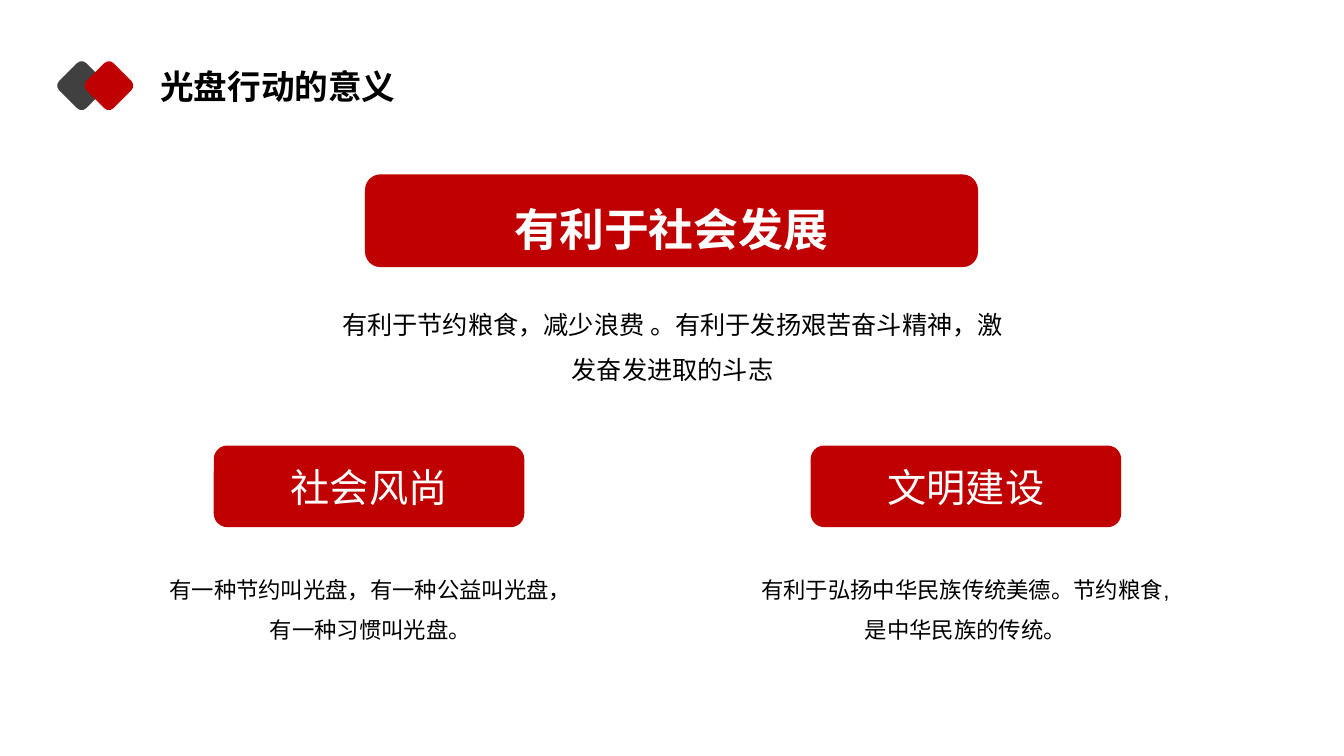
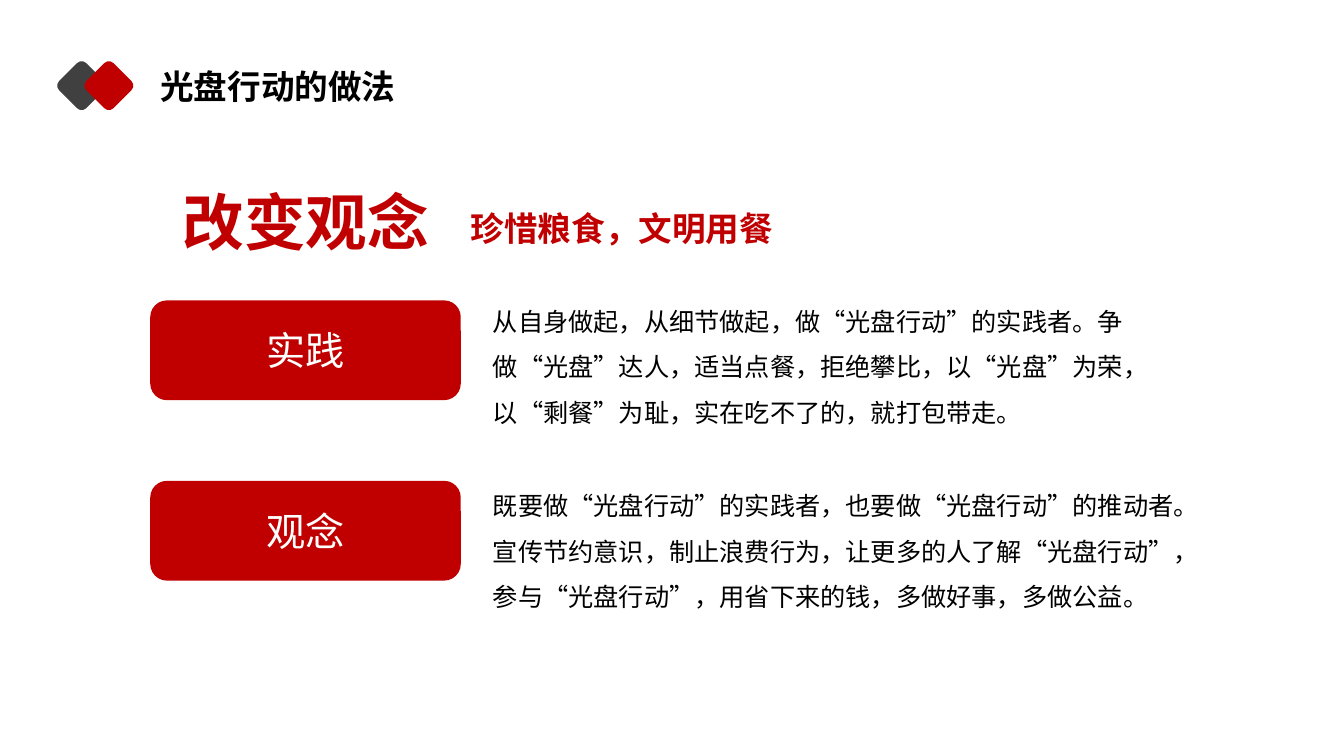
from dataclasses import dataclass

from pptx import Presentation
from pptx.dml.color import RGBColor as RGB
from pptx.enum.lang import MSO_LANGUAGE_ID as Lang
from pptx.enum.shapes import MSO_SHAPE as Shape
from pptx.enum.text import MSO_ANCHOR as Anchor
from pptx.enum.text import MSO_AUTO_SIZE as Fit
from pptx.enum.text import PP_ALIGN as Align
from pptx.util import Inches, Pt


@dataclass(frozen=True)
class Theme:
    font: str = "Arial"
    red: RGB = RGB(0xC0, 0x00, 0x00)
    gray: RGB = RGB(0x40, 0x40, 0x40)
    black: RGB = RGB(0x00, 0x00, 0x00)
    white: RGB = RGB(0xFF, 0xFF, 0xFF)
    small: int = 16
    body: int = 18
    title: int = 24
    label: int = 28
    banner: int = 32
    hero: int = 44


THEME = Theme()


def write(frame, text, size, color, bold=False, align=Align.LEFT, lead=1.0):
    """Put one styled run into the first paragraph of a frame."""
    para = frame.paragraphs[0]
    para.alignment = align
    para.line_spacing = lead
    run = para.add_run()
    run.text = text
    font = run.font
    font.name = THEME.font
    font.size = Pt(size)
    font.bold = bold
    font.color.rgb = color
    font.language_id = Lang.SIMPLIFIED_CHINESE


def add_block(shapes, box, color):
    block = shapes.add_shape(Shape.ROUNDED_RECTANGLE, *map(Inches, box))
    block.shadow.inherit = False
    block.fill.solid()
    block.fill.fore_color.rgb = color
    block.line.fill.background()
    return block


def add_label(slide, box, text, size=THEME.label, bold=False, lead=1.0):
    """Add a red block with centred white text."""
    frame = add_block(slide.shapes, box, THEME.red).text_frame
    frame.word_wrap = True
    frame.vertical_anchor = Anchor.MIDDLE
    write(frame, text, size, THEME.white, bold, Align.CENTER, lead)


def add_text(slide, box, text, size=THEME.body, color=THEME.black,
             bold=False, align=Align.LEFT, lead=1.5, wrap=True):
    frame = slide.shapes.add_textbox(*map(Inches, box)).text_frame
    frame.word_wrap = wrap
    frame.auto_size = Fit.SHAPE_TO_FIT_TEXT
    write(frame, text, size, color, bold, align, lead)


def add_mark(slide):
    """Add the pair of overlapping diamonds beside the title."""
    group = slide.shapes.add_group_shape()
    for left, color in ((0.62, THEME.gray), (0.89, THEME.red)):
        add_block(group.shapes, (left, 0.66, 0.38, 0.38), color).rotation = 45


def add_slide(deck, text):
    """Start a slide with the shared mark and title."""
    slide = deck.slides.add_slide(deck.slide_layouts[5])
    add_mark(slide)
    title = slide.shapes.title
    title.left, title.top = Inches(1.49), Inches(0.6)
    title.width, title.height = Inches(2.56), Inches(0.5)
    frame = title.text_frame
    frame.word_wrap = False
    frame.auto_size = Fit.SHAPE_TO_FIT_TEXT
    frame.vertical_anchor = Anchor.TOP
    write(frame, text, THEME.title, THEME.black, bold=True)
    return slide


def add_value(deck):
    slide = add_slide(deck, "光盘行动的意义")
    add_label(slide, (3.62, 1.73, 6.08, 0.92), "有利于社会发展",
              THEME.banner, bold=True, lead=1.3)
    add_text(slide, (3.28, 2.87, 6.78, 1.01),
             "有利于节约粮食，减少浪费 。有利于发扬艰苦奋斗精神，激发奋发进取的斗志",
             align=Align.CENTER)
    columns = (
        (2.12, "社会风尚", 1.49,
         "有一种节约叫光盘，有一种公益叫光盘，有一种习惯叫光盘。"),
        (8.04, "文明建设", 7.39,
         "有利于弘扬中华民族传统美德。节约粮食,是中华民族的传统。"),
    )
    for left, label, edge, text in columns:
        add_label(slide, (left, 4.42, 3.08, 0.81), label)
        add_text(slide, (edge, 5.53, 4.37, 0.91), text, THEME.small,
                 align=Align.CENTER)


def add_action(deck):
    slide = add_slide(deck, "光盘行动的做法")
    add_text(slide, (1.7, 1.56, 2.67, 1.06), "改变观念", THEME.hero,
             THEME.red, bold=True, align=Align.CENTER, lead=1.3, wrap=False)
    add_text(slide, (4.57, 1.81, 7.03, 0.71), "珍惜粮食，文明用餐",
             THEME.title, THEME.red, bold=True)
    rows = (
        (2.98, "实践", 2.84,
         "从自身做起，从细节做起，做“光盘行动”的实践者。争做“光盘”达人，"
         "适当点餐，拒绝攀比，以“光盘”为荣，以“剩餐”为耻，"
         "实在吃不了的，就打包带走。"),
        (4.77, "观念", 4.67,
         "既要做“光盘行动”的实践者，也要做“光盘行动”的推动者。"
         "宣传节约意识，制止浪费行为，让更多的人了解“光盘行动”，"
         "参与“光盘行动”，用省下来的钱，多做好事，多做公益。"),
    )
    for top, label, edge, text in rows:
        add_label(slide, (1.49, top, 3.08, 0.99), label)
        add_text(slide, (4.79, edge, 7.03, 1.46), text)


def main():
    deck = Presentation()
    deck.slide_width, deck.slide_height = Inches(13.33), Inches(7.5)
    add_value(deck)
    add_action(deck)
    deck.save("out.pptx")


if __name__ == "__main__":
    main()
